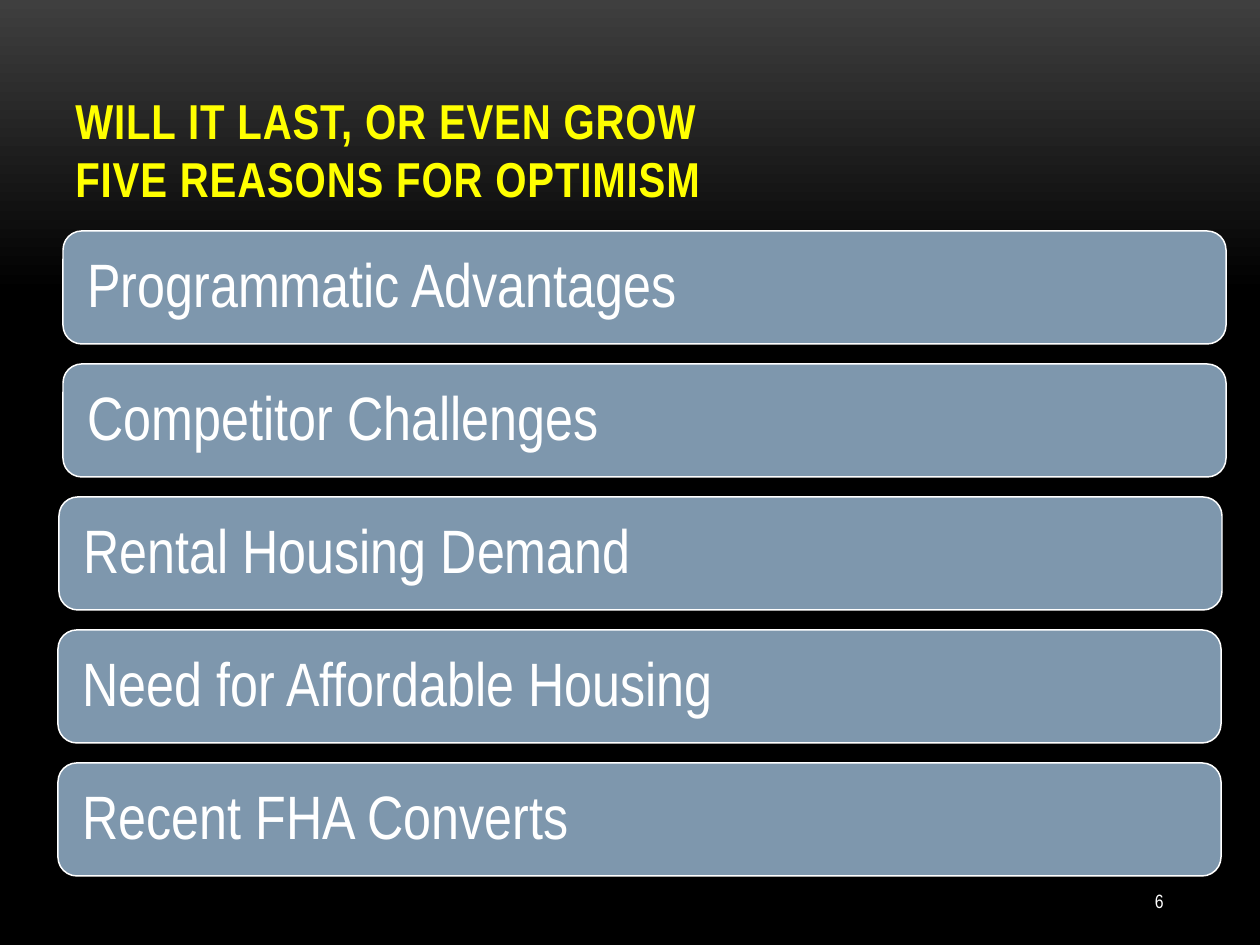
from pptx import Presentation
from pptx.dml.color import RGBColor
from pptx.enum.shapes import MSO_SHAPE
from pptx.enum.text import MSO_ANCHOR, PP_ALIGN
from pptx.util import Emu, Pt

FONT = "Arial Narrow"
COLORS = {
    "top": "3F3F3F",
    "base": "000000",
    "title": "FFFF00",
    "bar": "7E97AD",
    "white": "FFFFFF",
}
REASONS = [
    ("Programmatic Advantages", 63),
    ("Competitor Challenges", 63),
    ("Rental Housing Demand", 59),
    ("Need for Affordable Housing", 58),
    ("Recent FHA Converts", 58),
]


def px(n):
    """Turn pixels into EMU."""
    return Emu(round(n * 914400 / 126))


def rgb(name):
    """Look up a palette colour."""
    return RGBColor.from_string(COLORS[name])


def write(shape, text, size, color, anchor, align=PP_ALIGN.LEFT):
    """Fill a shape with one formatted paragraph and return it."""
    tf = shape.text_frame
    tf.word_wrap = True
    tf.vertical_anchor = anchor
    p = tf.paragraphs[0]
    p.text = text
    p.alignment = align
    for r in p.runs:
        r.font.name = FONT
        r.font.size = Pt(size)
        r.font.color.rgb = rgb(color)
    return p


def add_background(s):
    """Fade the slide from grey at the top to black."""
    fill = s.background.fill
    fill.gradient()
    fill.gradient_angle = 270
    for stop, position, name in zip(fill.gradient_stops, (0, 0.31), ("top", "base")):
        stop.position = position
        stop.color.rgb = rgb(name)


def add_title(s, x, y, w, h):
    """Place the two-line heading at the foot of its box."""
    sp = s.shapes.add_textbox(px(x), px(y), px(w), px(h))
    text = "WILL IT LAST, OR EVEN GROW\vFIVE REASONS FOR OPTIMISM"
    p = write(sp, text, 28, "title", MSO_ANCHOR.BOTTOM)
    for r in p.runs:
        r.font.bold = True
        r.font._element.set("spc", "50")


def add_bar(s, text, x, y, w, h):
    """Place one rounded bar with its reason."""
    sp = s.shapes.add_shape(MSO_SHAPE.ROUNDED_RECTANGLE, px(x), px(y), px(w), px(h))
    sp.shadow.inherit = False
    sp.fill.solid()
    sp.fill.fore_color.rgb = rgb("bar")
    sp.line.color.rgb = rgb("white")
    sp.line.width = Pt(0.85)
    p = write(sp, text, 35, "white", MSO_ANCHOR.MIDDLE)
    p.line_spacing = 0.9
    tf = sp.text_frame
    tf.margin_left = tf.margin_right = px(19)
    tf.margin_top = tf.margin_bottom = px(19)


def add_reasons(s, y, w, h):
    """Stack the reason bars evenly over the given height."""
    bar_h = 113
    step = (h - bar_h) / (len(REASONS) - 1)
    for i, (text, x) in enumerate(REASONS):
        add_bar(s, text, x, y + i * step, w, bar_h)


def add_page_number(s, x, y, w, h):
    """Place the page number at the right of its box."""
    sp = s.shapes.add_textbox(px(x), px(y), px(w), px(h))
    write(sp, "6", 11, "white", MSO_ANCHOR.MIDDLE, PP_ALIGN.RIGHT)


def main():
    """Build and save the slide."""
    prs = Presentation()
    prs.slide_width, prs.slide_height = px(1260), px(945)
    s = prs.slides.add_slide(prs.slide_layouts[6])
    add_background(s)
    add_title(s, 63, 72, 1134, 142)
    add_page_number(s, 1040, 876, 136, 50)
    add_reasons(s, 231, 1163, 645)
    prs.save("out.pptx")


if __name__ == "__main__":
    main()
